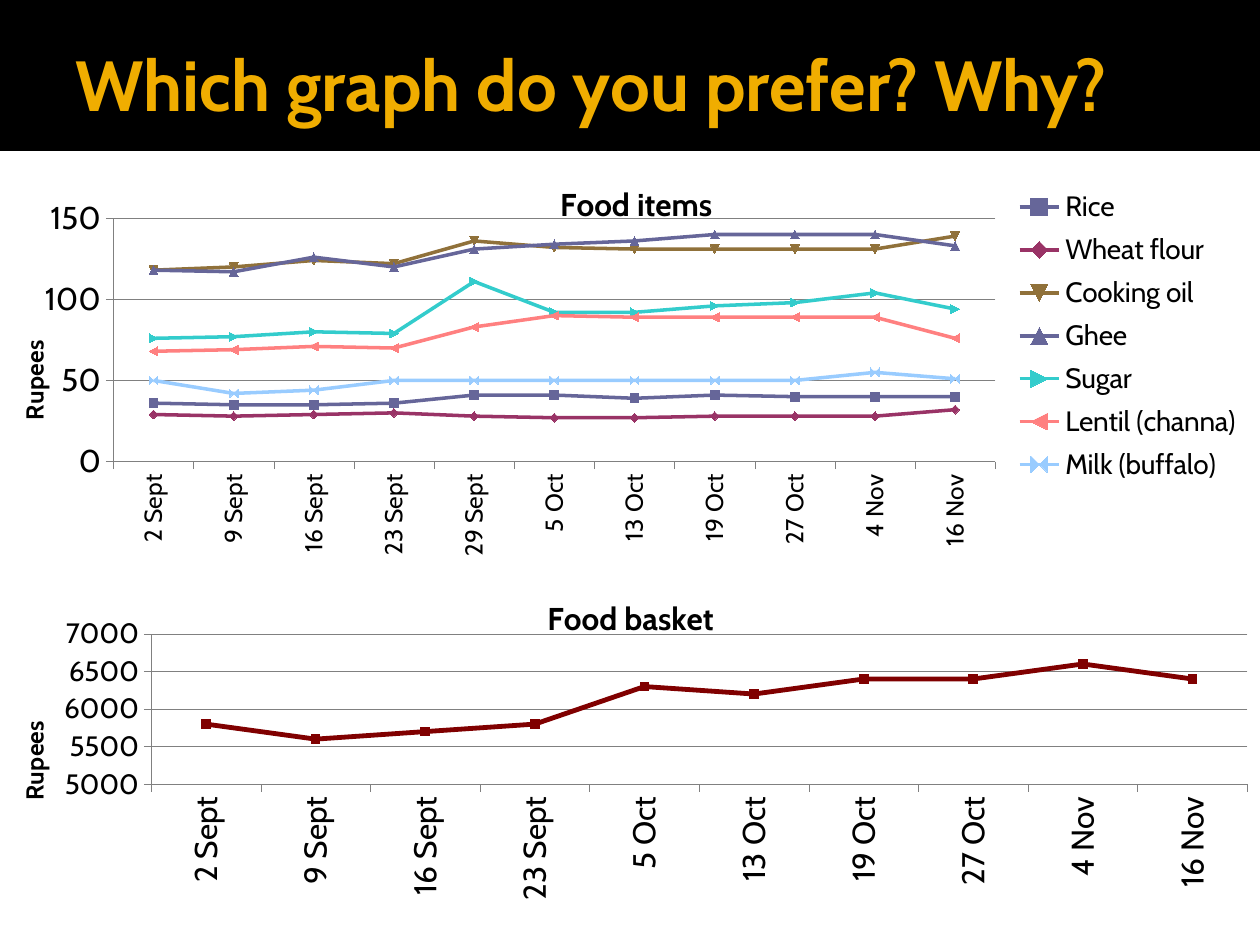
from lxml.etree import SubElement
from pptx import Presentation
from pptx.chart.data import CategoryChartData
from pptx.dml.color import RGBColor
from pptx.enum.chart import XL_CHART_TYPE, XL_LEGEND_POSITION, XL_TICK_MARK
from pptx.enum.shapes import MSO_SHAPE
from pptx.enum.text import MSO_ANCHOR
from pptx.oxml import parse_xml
from pptx.oxml.ns import nsdecls, qn
from pptx.util import Pt

FONT = "Cabin"
GRID = "808080"
DATES = ["2 Sept", "9 Sept", "16 Sept", "23 Sept", "29 Sept", "5 Oct",
         "13 Oct", "19 Oct", "27 Oct", "4 Nov", "16 Nov"]
FOOD_ITEMS = [
    ("Rice", "666699", [36, 35, 35, 36, 41, 41, 39, 41, 40, 40, 40]),
    ("Wheat flour", "993366", [29, 28, 29, 30, 28, 27, 27, 28, 28, 28, 32]),
    ("Cooking oil", "90713A", [118, 120, 124, 122, 136, 132, 131, 131, 131, 131, 139]),
    ("Ghee", "666699", [118, 117, 126, 120, 131, 134, 136, 140, 140, 140, 133]),
    ("Sugar", "33CCCC", [76, 77, 80, 79, 111, 92, 92, 96, 98, 104, 94]),
    ("Lentil (channa)", "FF8080", [68, 69, 71, 70, 83, 90, 89, 89, 89, 89, 76]),
    ("Milk (buffalo)", "99CCFF", [50, 42, 44, 50, 50, 50, 50, 50, 50, 55, 51]),
]
FOOD_BASKET = [
    ("Food basket", "800000",
     [5800, 5600, 5700, 5800, 6300, 6200, 6400, 6400, 6600, 6400]),
]


def color(hex_text):
    return RGBColor.from_string(hex_text)


def set_font(font, size, hex_text="000000", bold=False):
    font.name = FONT
    font.size = Pt(size)
    font.bold = bold
    font.color.rgb = color(hex_text)


def set_line(line, hex_text, width):
    line.color.rgb = color(hex_text)
    line.width = Pt(width)


def place(element, index, x, y, size=None, inner=False):
    """Give a chart part a manual layout, in fractions of the chart."""
    for old in element.findall(qn("c:layout")):
        element.remove(old)
    layout = parse_xml(f"<c:layout {nsdecls('c')}/>")
    element.insert(index, layout)
    manual = SubElement(layout, qn("c:manualLayout"))
    settings = [("layoutTarget", "inner")] if inner else []
    settings += [("xMode", "edge"), ("yMode", "edge"), ("x", x), ("y", y)]
    if size:
        settings += [("w", size[0]), ("h", size[1])]
    for tag, value in settings:
        SubElement(manual, qn(f"c:{tag}")).set("val", str(value))


def fill_chart_white(chart):
    fill = parse_xml(
        f"<c:spPr {nsdecls('c', 'a')}><a:solidFill><a:srgbClr val='FFFFFF'/>"
        "</a:solidFill><a:ln><a:noFill/></a:ln></c:spPr>")
    chart.element.find(qn("c:chart")).addnext(fill)


def add_title(holder, text, size, x, y):
    """Title a chart or an axis, with its top left corner at x, y."""
    holder.has_title = True
    title = holder.chart_title if hasattr(holder, "chart_title") else holder.axis_title
    paragraph = title.text_frame.paragraphs[0]
    paragraph.text = text
    set_font(paragraph.font, size, bold=True)
    place(title.element if hasattr(title, "element") else title._element, 1, x, y)


def style_axis(axis, size):
    axis.major_tick_mark = XL_TICK_MARK.OUTSIDE
    axis.minor_tick_mark = XL_TICK_MARK.NONE
    set_font(axis.tick_labels.font, size)
    set_line(axis.format.line, GRID, 0.25)


def add_line_chart(slide, box, dates, rows, title, plot, value_range,
                   sizes, line_width, title_at, axis_title_at):
    data = CategoryChartData(number_format="0")
    data.categories = dates
    for name, _, values in rows:
        data.add_series(name, values)
    chart = slide.shapes.add_chart(
        XL_CHART_TYPE.LINE_MARKERS, *map(Pt, box), data).chart
    set_font(chart.font, 10)
    chart.has_legend = False
    chart.plots[0].vary_by_categories = False
    add_title(chart, title, 18, *title_at)
    chart.chart_title.include_in_layout = False

    for series, (_, hex_text, _) in zip(chart.plots[0].series, rows):
        series.smooth = False
        set_line(series.format.line, hex_text, line_width)
        series.marker.size = 5
        series.marker.format.fill.solid()
        series.marker.format.fill.fore_color.rgb = color(hex_text)
        set_line(series.marker.format.line, hex_text, 0.75)

    dates_axis, rupees_axis = chart.category_axis, chart.value_axis
    style_axis(dates_axis, sizes[0])
    labels = dates_axis._element.find(qn("c:txPr")).find(qn("a:bodyPr"))
    labels.set("rot", "-5400000")
    labels.set("vert", "horz")
    style_axis(rupees_axis, sizes[1])
    rupees_axis.minimum_scale, rupees_axis.maximum_scale, rupees_axis.major_unit = value_range
    rupees_axis.tick_labels.number_format = "0"
    rupees_axis.tick_labels.number_format_is_linked = False
    set_line(rupees_axis.major_gridlines.format.line, GRID, 0.25)
    add_title(rupees_axis, "Rupees", 14, *axis_title_at)
    title_body = rupees_axis.axis_title.text_frame._txBody.find(qn("a:bodyPr"))
    title_body.set("rot", "-5400000")
    title_body.set("vert", "horz")

    plot_area = chart.element.find(qn("c:chart")).find(qn("c:plotArea"))
    place(plot_area, 0, *plot[:2], size=plot[2:], inner=True)
    return chart


def add_legend(chart, x, y, width, height):
    chart.has_legend = True
    legend = chart.legend
    legend.position = XL_LEGEND_POSITION.RIGHT
    legend.include_in_layout = False
    set_font(legend.font, 16)
    place(legend._element, 1, x, y, size=(width, height))


def add_header(slide, text):
    band = slide.shapes.add_shape(MSO_SHAPE.RECTANGLE, 0, 0, Pt(720), Pt(113))
    band.shadow.inherit = False
    band.fill.solid()
    band.fill.fore_color.rgb = color("000000")
    band.line.fill.background()

    frame = slide.shapes.add_textbox(Pt(36), Pt(-2), Pt(648), Pt(98.5)).text_frame
    frame.word_wrap = True
    frame.vertical_anchor = MSO_ANCHOR.MIDDLE
    frame.margin_left = Pt(7.2)
    frame.margin_right = Pt(3.6)
    paragraph = frame.paragraphs[0]
    paragraph.text = text
    set_font(paragraph.font, 40.5, "F0AD00", bold=True)


def main():
    presentation = Presentation()
    presentation.slide_width, presentation.slide_height = Pt(720), Pt(540)
    slide = presentation.slides.add_slide(presentation.slide_layouts[6])
    add_header(slide, "Which graph do you prefer? Why?")

    items = add_line_chart(
        slide, (0, 86.4, 720, 239.8), DATES, FOOD_ITEMS, "Food items",
        plot=(0.09, 0.16, 0.7, 0.58), value_range=(0, 150, 50), sizes=(14, 18),
        line_width=2, title_at=(0.44, 0.06), axis_title_at=(0.01, 0.44))
    fill_chart_white(items)
    add_legend(items, 0.8, 0.07, 0.19, 0.74)

    basket_dates = [date for date in DATES if date != "29 Sept"]
    add_line_chart(
        slide, (0, 325.5, 720, 204.5), basket_dates, FOOD_BASKET, "Food basket",
        plot=(0.12, 0.18, 0.87, 0.42), value_range=(5000, 7000, 500), sizes=(18, 16),
        line_width=2.75, title_at=(0.43, 0.06), axis_title_at=(0.01, 0.41))
    presentation.save("out.pptx")


if __name__ == "__main__":
    main()
